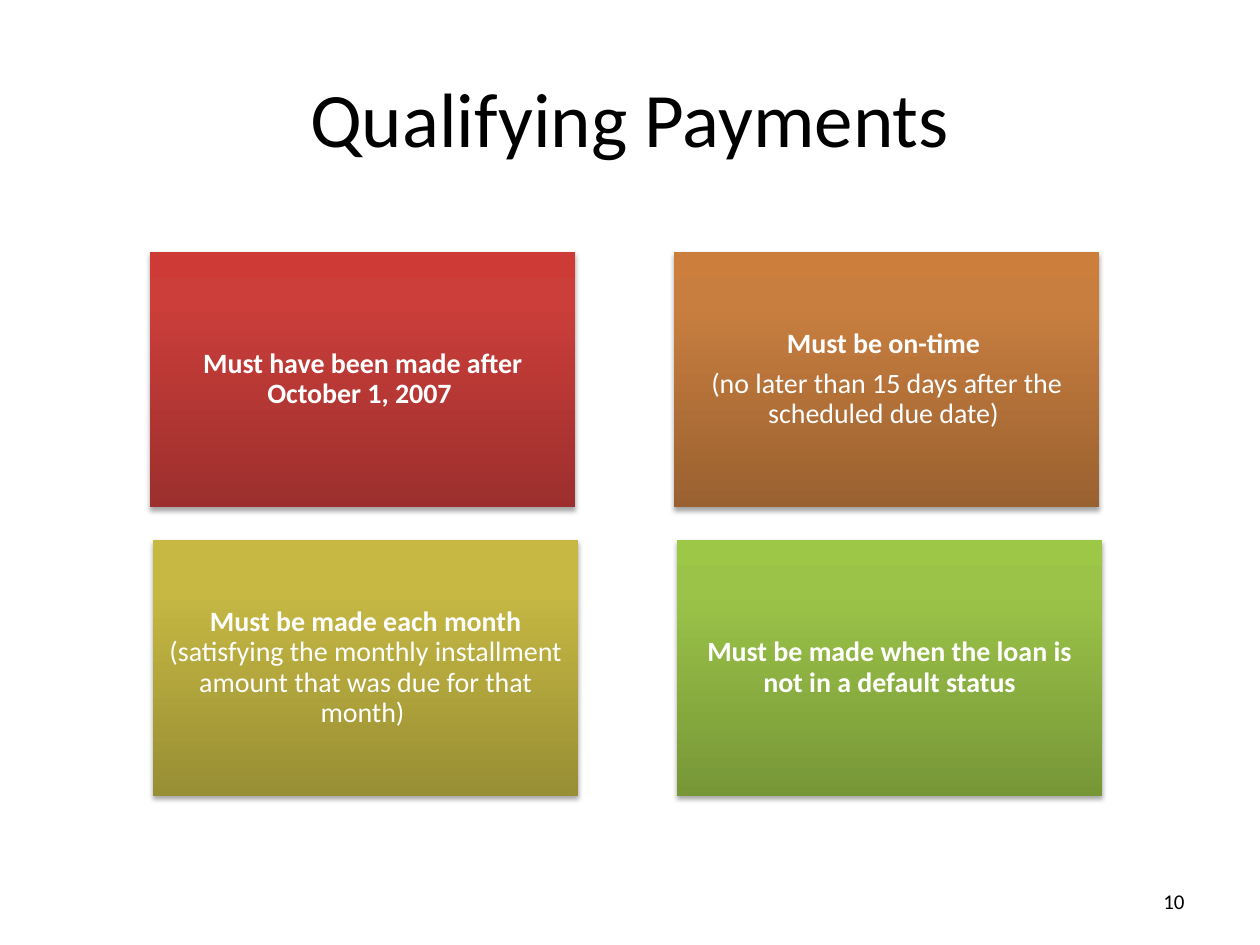
import pptx
import pptx.dml.color
import pptx.enum.shapes
import pptx.enum.text
import pptx.oxml
import pptx.oxml.ns
import pptx.util

Pt = pptx.util.Pt
ALIGN = pptx.enum.text.PP_ALIGN
FONT = "Calibri"
COLORS = {
    "text": "000000",
    "card_text": "FFFFFF",
    "shadow": "000000",
    "red": ("9C2F2D", "CB3E3A", "CE3B37"),
    "orange": ("9A6130", "C87E3F", "CC7E3C"),
    "yellow": ("988E34", "C6B843", "C9BB41"),
    "green": ("779737", "9BC348", "9DC746"),
}
STOPS = (0, 80, 100)

# Each card: gradient, then paragraphs of (wording, bold) spans
CARDS = [
    ("red", [[("Must have been made after October 1, 2007 ", True)]]),
    ("orange", [[("Must be on-time ", True)],
                [("(no later than 15 days after the scheduled due date) ", False)]]),
    ("yellow", [[("Must be made each month ", True),
                 ("(satisfying the monthly installment amount that was due "
                  "for that month) ", False)]]),
    ("green", [[("Must be made when the loan is not in a default status", True)]]),
]


def style_font(font, size, color):
    font.name = FONT
    font.size = Pt(size)
    font.color.rgb = pptx.dml.color.RGBColor.from_string(COLORS[color])


def add_label(page, left, top, width, height, wording, size, align):
    box = page.shapes.add_textbox(Pt(left), Pt(top), Pt(width), Pt(height))
    frame = box.text_frame
    frame.word_wrap = True
    frame.vertical_anchor = pptx.enum.text.MSO_ANCHOR.MIDDLE
    para = frame.paragraphs[0]
    para.text = wording
    para.alignment = align
    style_font(para.font, size, "text")


def apply_gradient_and_shadow(shape, shades):
    """Fill upwards from the darkest shade and cast a soft shadow below."""
    namespace = pptx.oxml.ns.nsdecls("a")
    stops = "".join(
        f'<a:gs pos="{stop * 1000}"><a:srgbClr val="{shade}"/></a:gs>'
        for stop, shade in zip(STOPS, shades))
    gradient = pptx.oxml.parse_xml(
        f'<a:gradFill {namespace} rotWithShape="1"><a:gsLst>{stops}</a:gsLst>'
        '<a:lin ang="16200000" scaled="0"/></a:gradFill>')
    effects = pptx.oxml.parse_xml(
        f'<a:effectLst {namespace}><a:outerShdw blurRad="{Pt(3.1)}" '
        f'dist="{Pt(1.8)}" dir="5400000" rotWithShape="0">'
        f'<a:srgbClr val="{COLORS["shadow"]}"><a:alpha val="35000"/></a:srgbClr>'
        '</a:outerShdw></a:effectLst>')
    shape.line.fill.background()
    properties = shape.element.spPr
    properties.find(pptx.oxml.ns.qn("a:prstGeom")).addnext(gradient)
    properties.find(pptx.oxml.ns.qn("a:ln")).addnext(effects)


def add_card(page, left, top, width, height, color, paragraphs):
    card = page.shapes.add_shape(
        pptx.enum.shapes.MSO_SHAPE.RECTANGLE,
        Pt(left), Pt(top), Pt(width), Pt(height))
    apply_gradient_and_shadow(card, COLORS[color])
    frame = card.text_frame
    frame.word_wrap = True
    frame.vertical_anchor = pptx.enum.text.MSO_ANCHOR.MIDDLE
    frame.margin_left = frame.margin_right = Pt(8.6)
    frame.margin_top = frame.margin_bottom = Pt(8.6)
    for index, spans in enumerate(paragraphs):
        para = frame.paragraphs[0] if index == 0 else frame.add_paragraph()
        para.alignment = ALIGN.CENTER
        para.line_spacing = 0.9
        para.space_after = Pt(5.6)
        style_font(para.font, 16, "card_text")
        for wording, bold in spans:
            span = para.add_run()
            span.text = wording
            span.font.bold = bold


def add_card_grid(page, left, top, width, height):
    """Two by two cards; the lower row sits slightly to the right."""
    card_width, card_height, row_shift = 243.2, 146, 1.7
    column_step = width - row_shift - card_width
    row_step = height - card_height
    for index, (color, paragraphs) in enumerate(CARDS):
        row, column = divmod(index, 2)
        add_card(page, left + column * column_step + row * row_shift,
                 top + row * row_step, card_width, card_height,
                 color, paragraphs)


def main():
    deck = pptx.Presentation()
    deck.slide_width, deck.slide_height = Pt(720), Pt(540)
    page = deck.slides.add_slide(deck.slide_layouts[6])
    add_label(page, 36, 21.6, 648, 90, "Qualifying Payments", 44, ALIGN.CENTER)
    add_card_grid(page, 85.7, 144, 544.3, 310.6)
    add_label(page, 516, 500.5, 168, 28.8, "10", 12, ALIGN.RIGHT)
    deck.save("out.pptx")


if __name__ == "__main__":
    main()
